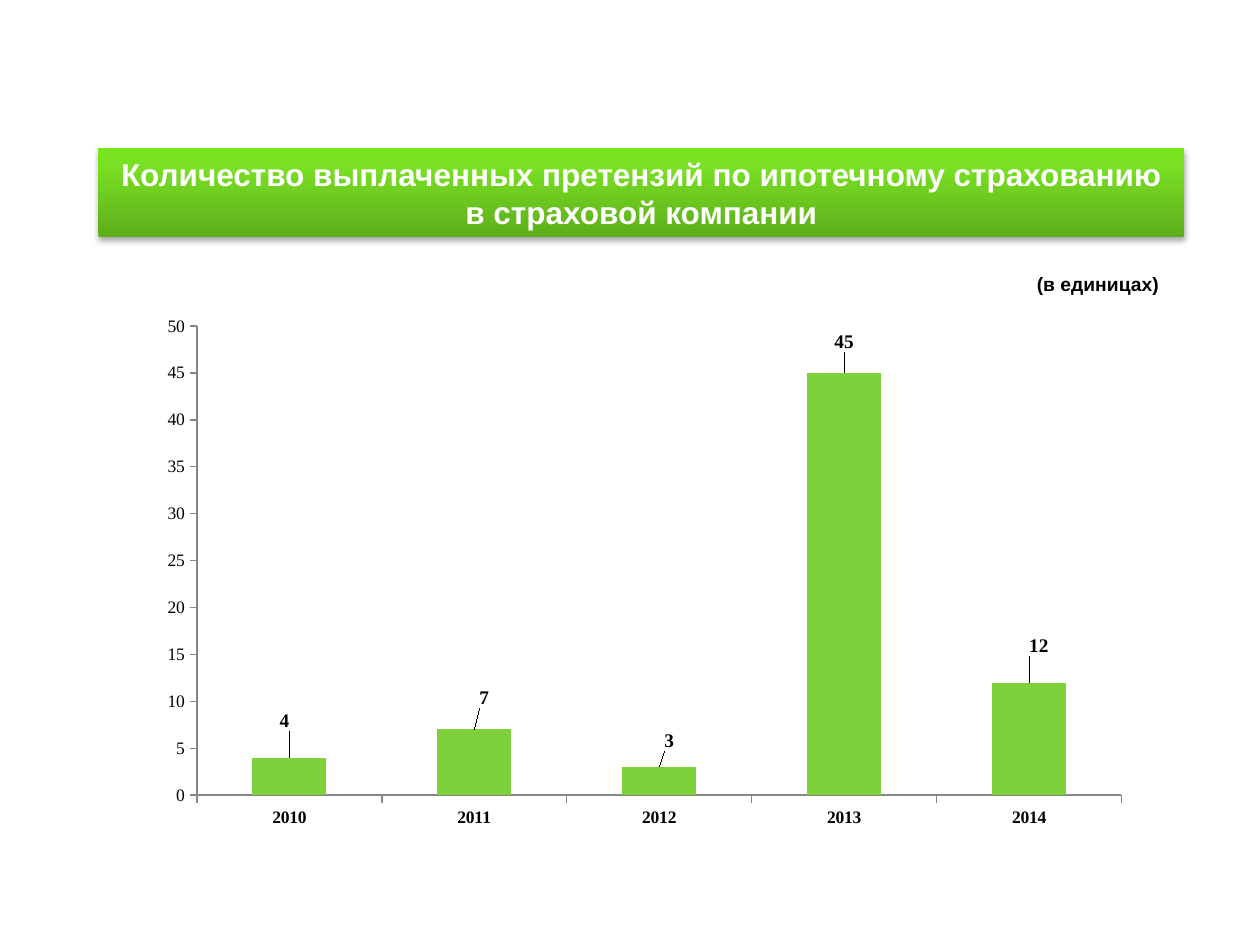
import pptx
import pptx.chart.data
import pptx.dml.color
import pptx.enum.chart
import pptx.enum.text
import pptx.oxml
import pptx.oxml.ns
import pptx.util

Pt = pptx.util.Pt
SERIF = "Times New Roman"
# year, paid claims, label shift as a share of the chart's width and height
CLAIMS = [
    ("2010", 4, -0.005, -0.04),
    ("2011", 7, 0.01, -0.03),
    ("2012", 3, 0.01, -0.02),
    ("2013", 45, 0, -0.03),
    ("2014", 12, 0.01, -0.04),
]


def rgb(code):
    return pptx.dml.color.RGBColor.from_string(code)


def style(font, name, size, bold=False, color="000000"):
    font.name = name
    font.size = Pt(size)
    font.bold = bold
    font.color.rgb = rgb(color)


def make(tag, body):
    """Build an XML element of a drawing or chart from its inner XML."""
    names = pptx.oxml.ns.nsdecls("a", "c")
    return pptx.oxml.parse_xml(f"<{tag} {names}>{body}</{tag}>")


def place(shape, left, top, width, height):
    shape.left, shape.top = Pt(left), Pt(top)
    shape.width, shape.height = Pt(width), Pt(height)


def write(shape, lines, size, color, align):
    frame = shape.text_frame
    frame.word_wrap = False
    frame.auto_size = pptx.enum.text.MSO_AUTO_SIZE.NONE
    frame.vertical_anchor = pptx.enum.text.MSO_ANCHOR.MIDDLE
    frame.text = "\n".join(lines)
    for para in frame.paragraphs:
        para.alignment = align
        para.space_before = Pt(0)
        for run in para.runs:
            style(run.font, "Arial", size, True, color)


def add_title(slide):
    title = slide.shapes.title
    place(title, 56.2, 84.6, 620.6, 51)
    write(title, ["Количество выплаченных претензий по ипотечному страхованию",
                  "в страховой компании"],
          18, "FFFFFF", pptx.enum.text.PP_ALIGN.CENTER)
    stops = "".join(
        f'<a:gs pos="{pos * 1000}"><a:srgbClr val="{code}"/></a:gs>'
        for pos, code in [(0, "5DAD1B"), (80, "79E023"), (100, "79E520")])
    props = title._element.spPr
    props.append(make("a:prstGeom", "<a:avLst/>"))
    props[-1].set("prst", "rect")
    props.append(make("a:gradFill", f'<a:gsLst>{stops}</a:gsLst>'
                      '<a:lin ang="16200000" scaled="0"/>'))
    props.append(make(
        "a:effectLst",
        f'<a:outerShdw blurRad="{Pt(3.1)}" dist="{Pt(1.8)}" dir="5400000" '
        'rotWithShape="0"><a:srgbClr val="000000"><a:alpha val="35000"/>'
        '</a:srgbClr></a:outerShdw>'))


def add_note(slide):
    note = slide.shapes.add_textbox(Pt(585.4), Pt(151.9), Pt(84.2), Pt(20.9))
    write(note, ["(в единицах)"], 11, "000000", pptx.enum.text.PP_ALIGN.LEFT)


def layout(body):
    return make("c:layout", f"<c:manualLayout>{body}</c:manualLayout>")


def add_chart(slide):
    kinds = pptx.enum.chart
    data = pptx.chart.data.CategoryChartData(number_format="General")
    data.categories = [row[0] for row in CLAIMS]
    data.add_series("Series 1", [row[1] for row in CLAIMS])
    chart = slide.shapes.add_chart(
        kinds.XL_CHART_TYPE.COLUMN_CLUSTERED,
        Pt(84.2), Pt(174.2), Pt(568.1), Pt(304.6), data).chart
    chart.has_legend = False
    chart.has_title = False
    style(chart.font, "Arial", 10)

    for axis, bold in [(chart.category_axis, True), (chart.value_axis, False)]:
        axis.has_major_gridlines = False
        axis.major_tick_mark = kinds.XL_TICK_MARK.OUTSIDE
        axis.minor_tick_mark = kinds.XL_TICK_MARK.NONE
        axis.format.line.color.rgb = rgb("868686")
        style(axis.tick_labels.font, SERIF, 10, bold)
    scale = chart.value_axis
    scale.minimum_scale, scale.maximum_scale, scale.major_unit = 0, 50, 5
    scale.tick_labels.number_format = "#,##0"
    scale.tick_labels.number_format_is_linked = False

    plot = chart.plots[0]
    plot.gap_width = 150
    plot.vary_by_categories = False
    bars = plot.series[0]
    bars.format.fill.solid()
    bars.format.fill.fore_color.rgb = rgb("7FD13B")
    bars.data_labels.show_value = True
    style(bars.data_labels.font, SERIF, 11, True)
    for index, (_, _, right, down) in enumerate(CLAIMS):
        label = bars.points[index].data_label
        style(label.font, SERIF, 11, True)
        label.position = kinds.XL_LABEL_POSITION.OUTSIDE_END
        item = bars.data_labels._element.findall(pptx.oxml.ns.qn("c:dLbl"))[index]
        item.insert(1, layout(f'<c:x val="{right}"/><c:y val="{down}"/>'))

    area = chart._chartSpace.chart.plotArea
    for old in area.findall(pptx.oxml.ns.qn("c:layout")):
        area.remove(old)
    area.insert(0, layout(
        '<c:layoutTarget val="inner"/><c:xMode val="edge"/><c:yMode val="edge"/>'
        '<c:x val="0.05"/><c:y val="0.04"/><c:w val="0.93"/><c:h val="0.88"/>'))


def main():
    deck = pptx.Presentation()
    deck.slide_width, deck.slide_height = Pt(720), Pt(540)
    slide = deck.slides.add_slide(deck.slide_layouts[5])
    add_title(slide)
    add_note(slide)
    add_chart(slide)
    deck.save("out.pptx")


if __name__ == "__main__":
    main()
